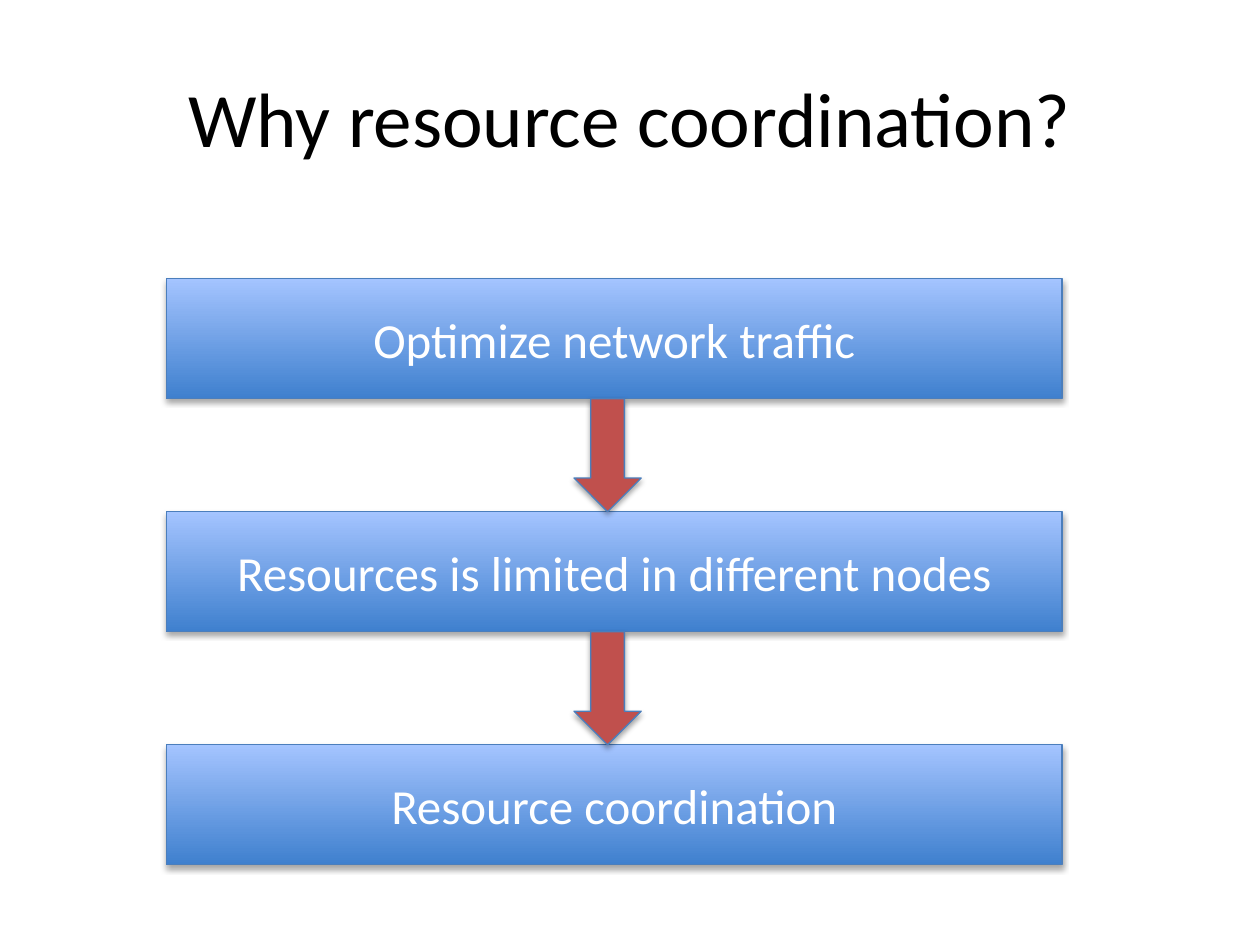
from pptx import Presentation
from pptx.dml.color import RGBColor
from pptx.enum.shapes import MSO_SHAPE
from pptx.enum.text import MSO_ANCHOR, PP_ALIGN
from pptx.util import Pt

RECTANGLE = MSO_SHAPE.RECTANGLE
DOWN_ARROW = MSO_SHAPE.DOWN_ARROW
MIDDLE = MSO_ANCHOR.MIDDLE
CENTER = PP_ALIGN.CENTER

BLACK = RGBColor(0x00, 0x00, 0x00)
WHITE = RGBColor(0xFF, 0xFF, 0xFF)
DEEP_BLUE = RGBColor(0x3F, 0x80, 0xCE)
PALE_BLUE = RGBColor(0xA4, 0xC4, 0xFF)
OUTLINE_BLUE = RGBColor(0x4B, 0x7E, 0xBC)
RED = RGBColor(0xC0, 0x50, 0x4D)

STEPS = [
    "Optimize network traffic",
    "Resources is limited in different nodes",
    "Resource coordination",
]
STEP_LEFT, STEP_TOP, STEP_WIDTH, STEP_HEIGHT = 95, 159.2, 512, 68.6
STEP_PITCH = 133.2
ARROW_LEFT, ARROW_WIDTH = 328, 38.4


def write_text(shape, text, size, color):
    frame = shape.text_frame
    frame.word_wrap = True
    frame.vertical_anchor = MIDDLE
    para = frame.paragraphs[0]
    para.alignment = CENTER
    span = para.add_run()
    span.text = text
    span.font.color.rgb = color
    for name, value in {"name": "Calibri", "size": Pt(size)}.items():
        setattr(span.font, name, value)


def add_outlined(kind, left, top, width, height):
    shape = page.shapes.add_shape(kind, Pt(left), Pt(top), Pt(width), Pt(height))
    shape.line.color.rgb = OUTLINE_BLUE
    shape.line.width = Pt(0.75)
    return shape


deck = Presentation()
deck.slide_width = Pt(720)
deck.slide_height = Pt(540)
page = deck.slides.add_slide(deck.slide_layouts[6])

title = page.shapes.add_textbox(Pt(36), Pt(21.6), Pt(648), Pt(90))
write_text(title, "Why resource coordination?", 44, BLACK)

for index, step in enumerate(STEPS):
    top = STEP_TOP + index * STEP_PITCH
    box = add_outlined(RECTANGLE, STEP_LEFT, top, STEP_WIDTH, STEP_HEIGHT)
    box.fill.gradient()
    box.fill.gradient_angle = 90
    for stop, color, position in zip(box.fill.gradient_stops, (DEEP_BLUE, PALE_BLUE), (0, 1)):
        stop.color.rgb = color
        stop.position = position
    write_text(box, step, 28, WHITE)

for index in range(len(STEPS) - 1):
    top = STEP_TOP + index * STEP_PITCH + STEP_HEIGHT
    arrow = add_outlined(DOWN_ARROW, ARROW_LEFT, top, ARROW_WIDTH, STEP_PITCH - STEP_HEIGHT)
    arrow.fill.solid()
    arrow.fill.fore_color.rgb = RED

deck.save("out.pptx")
